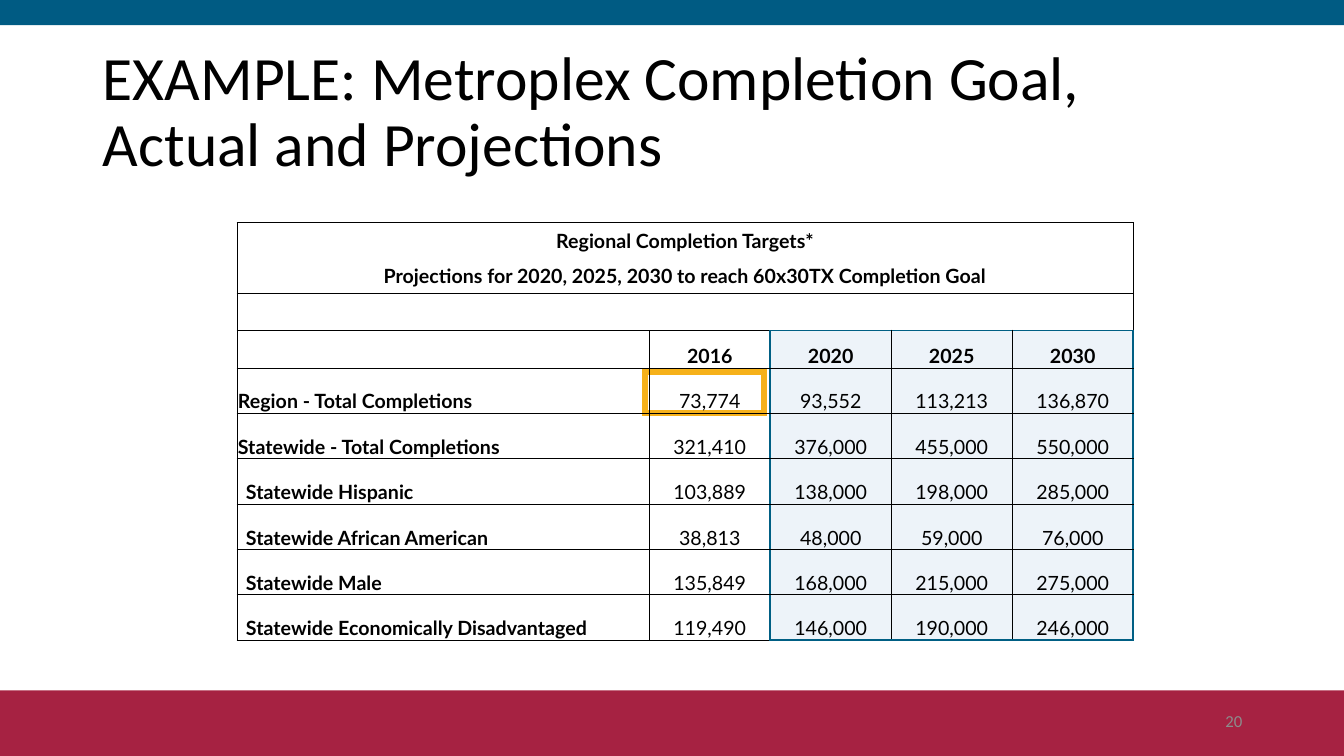
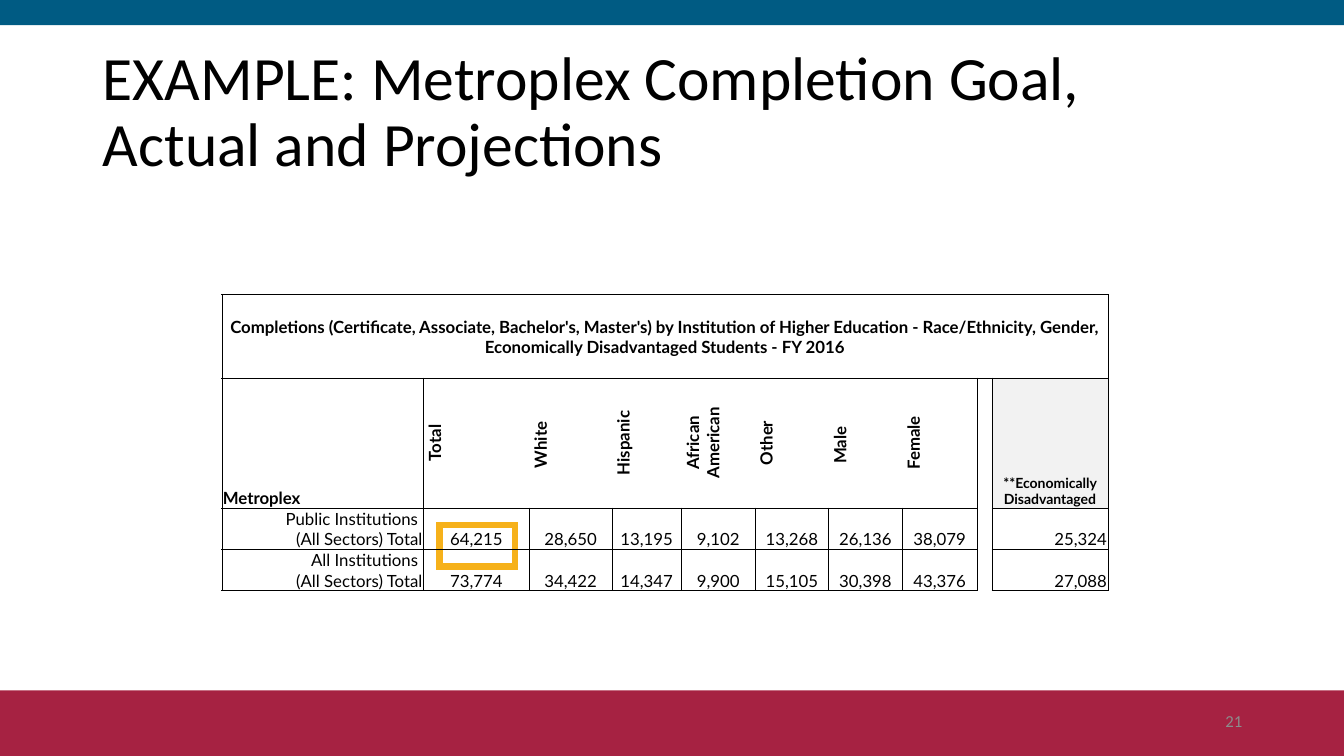
"""Build two slides of regional completion targets and results."""
import pptx
import pptx.util
import pptx.dml.color
import pptx.enum.shapes
import pptx.enum.text
import pptx.oxml
import pptx.oxml.ns

Inches, Pt = pptx.util.Inches, pptx.util.Pt
ALIGN, ANCHOR = pptx.enum.text.PP_ALIGN, pptx.enum.text.MSO_ANCHOR

COLORS = {"black": "000000", "teal": "005B83", "outline": "005F84", "crimson": "A62242",
          "gold": "F6B11A", "pale": "EDF3F9", "light": "F2F2F2", "gray": "8C8C8C"}
TITLE = "EXAMPLE: Metroplex Completion Goal, Actual and Projections"
BANDS = [("crimson", 6.85, 0.65), ("teal", 0, 0.25)]

TARGETS = [
    ["Regional Completion Targets*", "", "", "", ""],
    ["Projections for 2020, 2025, 2030 to reach 60x30TX Completion Goal", "", "", "", ""],
    ["", "", "", "", ""],
    ["", "2016", "2020", "2025", "2030"],
    ["Region - Total Completions", "73,774", "93,552", "113,213", "136,870"],
    ["Statewide - Total Completions", "321,410", "376,000", "455,000", "550,000"],
    ["Statewide Hispanic", "103,889", "138,000", "198,000", "285,000"],
    ["Statewide African American", "38,813", "48,000", "59,000", "76,000"],
    ["Statewide Male", "135,849", "168,000", "215,000", "275,000"],
    ["Statewide Economically Disadvantaged", "119,490", "146,000", "190,000", "246,000"],
]
TARGET_COLS = [4.09] + [1.2] * 4
TARGET_ROWS = [0.35] * 2 + [0.37] * 2 + [0.45] * 6
YEAR_ROW, FIRST_INDENTED, FIRST_PROJECTED = 3, 6, 2

RESULTS_TITLE = [["Completions (Certificate, Associate, Bachelor's, Master's) by Institution of "
                  "Higher Education - Race/Ethnicity, Gender, Economically Disadvantaged "
                  "Students - FY 2016"]]
RESULTS = [
    ["Metroplex", "Total", "White ", "Hispanic", "African American", "Other", "Male ", "Female",
     "", "**Economically Disadvantaged"],
    ["Public Institutions \n(All Sectors) Total", "64,215", "28,650", "13,195", "9,102",
     "13,268", "26,136", "38,079", "", "25,324"],
    ["All Institutions \n(All Sectors) Total", "73,774", "34,422", "14,347", "9,900",
     "15,105", "30,398", "43,376", "", "27,088"],
]
RESULT_COLS = [2, 1.05, 0.82, 0.69, 0.73, 0.73, 0.73, 0.74, 0.15, 1.15]
RESULT_ROWS = [1.28, 0.41, 0.41]
LAST_GROUP, GAP, DISADVANTAGED = 7, 8, 9


def rgb(name):
    return pptx.dml.color.RGBColor.from_string(COLORS[name])


def write(tf, text, size=12, font="Lato", color="black", bold=False, align=ALIGN.LEFT,
          anchor=ANCHOR.MIDDLE, spacing=None):
    tf.word_wrap = True
    tf.vertical_anchor = anchor
    for i, line in enumerate(text.split("\n")):
        p = tf.add_paragraph() if i else tf.paragraphs[0]
        p.alignment = align
        if spacing:
            p.line_spacing = spacing
        if line:
            r = p.add_run()
            r.text = line
            r.font.name, r.font.size, r.font.bold = font, Pt(size), bold
            r.font.color.rgb = rgb(color)


def add_box(slide, left, top, width, height, fill=None, line=None):
    sp = slide.shapes.add_shape(pptx.enum.shapes.MSO_SHAPE.RECTANGLE, Inches(left),
                                Inches(top), Inches(width), Inches(height))
    sp.shadow.inherit = False
    if fill:
        sp.fill.solid()
        sp.fill.fore_color.rgb = rgb(fill)
    else:
        sp.fill.background()
    if line:
        sp.line.color.rgb = rgb(line)
        sp.line.width = Pt(4.5)
        ln = sp.element.spPr.find(pptx.oxml.ns.qn("a:ln"))
        ln.append(pptx.oxml.parse_xml(f'<a:miter {pptx.oxml.ns.nsdecls("a")} lim="800000"/>'))
    else:
        sp.line.fill.background()
    return sp


def set_borders(cell, edges, heavy):
    tc_pr = cell._tc.get_or_add_tcPr()
    for i, side in enumerate("LRTB"):
        color, width = ("outline", 1.5) if side in heavy else ("black", 0.5)
        paint = (f'<a:solidFill><a:srgbClr val="{COLORS[color]}"/></a:solidFill>'
                 if side in edges else "<a:noFill/>")
        tc_pr.insert(i, pptx.oxml.parse_xml(
            f'<a:ln{side} {pptx.oxml.ns.nsdecls("a")} w="{Pt(width)}">{paint}</a:ln{side}>'))


def format_cell(cell, text, fill=None, edges="LRTB", heavy="", indent=0.01, vertical=False,
                **text_format):
    cell.margin_left = Inches(indent)
    cell.margin_right = cell.margin_top = Inches(0.01)
    cell.margin_bottom = 0
    write(cell.text_frame, text, **text_format)
    cell.vertical_anchor = text_format.get("anchor", ANCHOR.MIDDLE)
    if fill:
        cell.fill.solid()
        cell.fill.fore_color.rgb = rgb(fill)
    else:
        cell.fill.background()
    set_borders(cell, edges, heavy)
    if vertical:
        cell._tc.tcPr.set("vert", "vert270")


def add_grid(slide, left, top, cols, rows, data, cell_format, merged_rows=0):
    table = slide.shapes.add_table(len(rows), len(cols), Inches(left), Inches(top),
                                   Inches(sum(cols)), Inches(sum(rows))).table
    table.first_row = table.horz_banding = False
    for col, width in zip(table.columns, cols):
        col.width = Inches(width)
    for row, height in zip(table.rows, rows):
        row.height = Inches(height)
    for r, line in enumerate(data):
        for c, text in enumerate(line):
            format_cell(table.cell(r, c), text, **cell_format(r, c))
    for r in range(merged_rows):
        table.cell(r, 0).merge(table.cell(r, len(cols) - 1))


def target_format(r, c):
    if r < YEAR_ROW:
        return {"size": 14, "bold": True, "align": ALIGN.CENTER,
                "edges": ("LRT", "LRB", "LRTB")[r]}
    projected = c >= FIRST_PROJECTED
    heavy = ("L" if c == FIRST_PROJECTED else "") + (
        "R" if c in (FIRST_PROJECTED - 1, len(TARGET_COLS) - 1) else "")
    if projected:
        heavy += ("T" if r == YEAR_ROW else "") + ("B" if r == len(TARGETS) - 1 else "")
    return {"size": 14, "bold": c == 0 or r == YEAR_ROW, "anchor": ANCHOR.BOTTOM,
            "align": ALIGN.CENTER if c else ALIGN.LEFT, "heavy": heavy,
            "fill": "pale" if projected else None,
            "indent": 0.09 if c == 0 and r >= FIRST_INDENTED else 0.01}


def result_format(r, c):
    if c == GAP:
        return {"edges": "LR"}
    if r:
        side = c in (0, DISADVANTAGED)
        return {"align": ALIGN.RIGHT if side else ALIGN.CENTER, "anchor": ANCHOR.BOTTOM}
    if c == 0:
        return {"bold": True, "anchor": ANCHOR.BOTTOM}
    if c == DISADVANTAGED:
        return {"size": 10, "bold": True, "align": ALIGN.CENTER, "anchor": ANCHOR.BOTTOM,
                "fill": "light"}
    edges = "TB" + ("L" if c == 1 else "") + ("R" if c == LAST_GROUP else "")
    return {"bold": True, "align": ALIGN.CENTER, "vertical": True, "edges": edges}


def results_title_format(r, c):
    return {"bold": True, "align": ALIGN.CENTER}


def add_bands(prs, slide):
    for color, top, height in BANDS:
        sp = add_box(slide, 0, top, 13.33, height, fill=color)
        prs.slide_master.shapes.element.insert(2, sp.element)


def add_slide(prs, number):
    slide = prs.slides.add_slide(prs.slide_layouts.get_by_name("Title Only"))
    title = slide.shapes.title
    title.left, title.top, title.width, title.height = map(Inches, (0.92, 0.4, 11.5, 1.45))
    write(title.text_frame, TITLE, size=44, font="Calibri", spacing=0.9)
    sp = slide.shapes.add_textbox(*map(Inches, (9.42, 6.95, 3, 0.4)))
    write(sp.text_frame, str(number), font="Calibri", color="gray", align=ALIGN.RIGHT)
    return slide


def main():
    prs = pptx.Presentation()
    prs.slide_width, prs.slide_height = Inches(13.33), Inches(7.5)

    slide = add_slide(prs, 20)
    add_bands(prs, slide)
    add_box(slide, 6.4, 3.69, 1.18, 0.41, line="gold")
    add_grid(slide, 2.35, 2.21, TARGET_COLS, TARGET_ROWS, TARGETS, target_format, YEAR_ROW)

    slide = add_slide(prs, 21)
    add_grid(slide, 2.2, 2.92, [sum(RESULT_COLS)], [0.83], RESULTS_TITLE, results_title_format)
    add_box(slide, 4.36, 5.21, 0.75, 0.41, line="gold")
    add_grid(slide, 2.2, 3.75, RESULT_COLS, RESULT_ROWS, RESULTS, result_format)

    prs.save("out.pptx")


if __name__ == "__main__":
    main()
